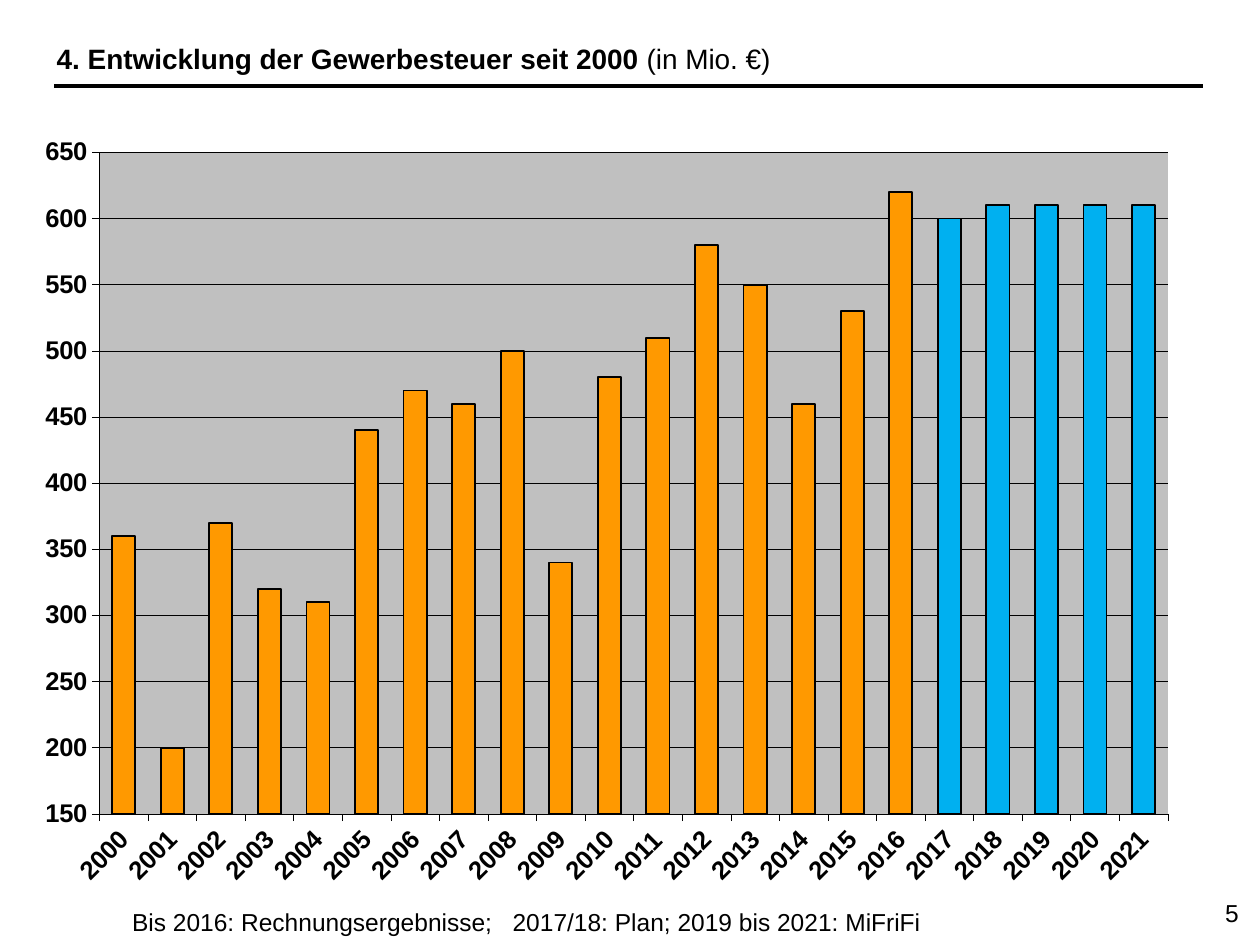
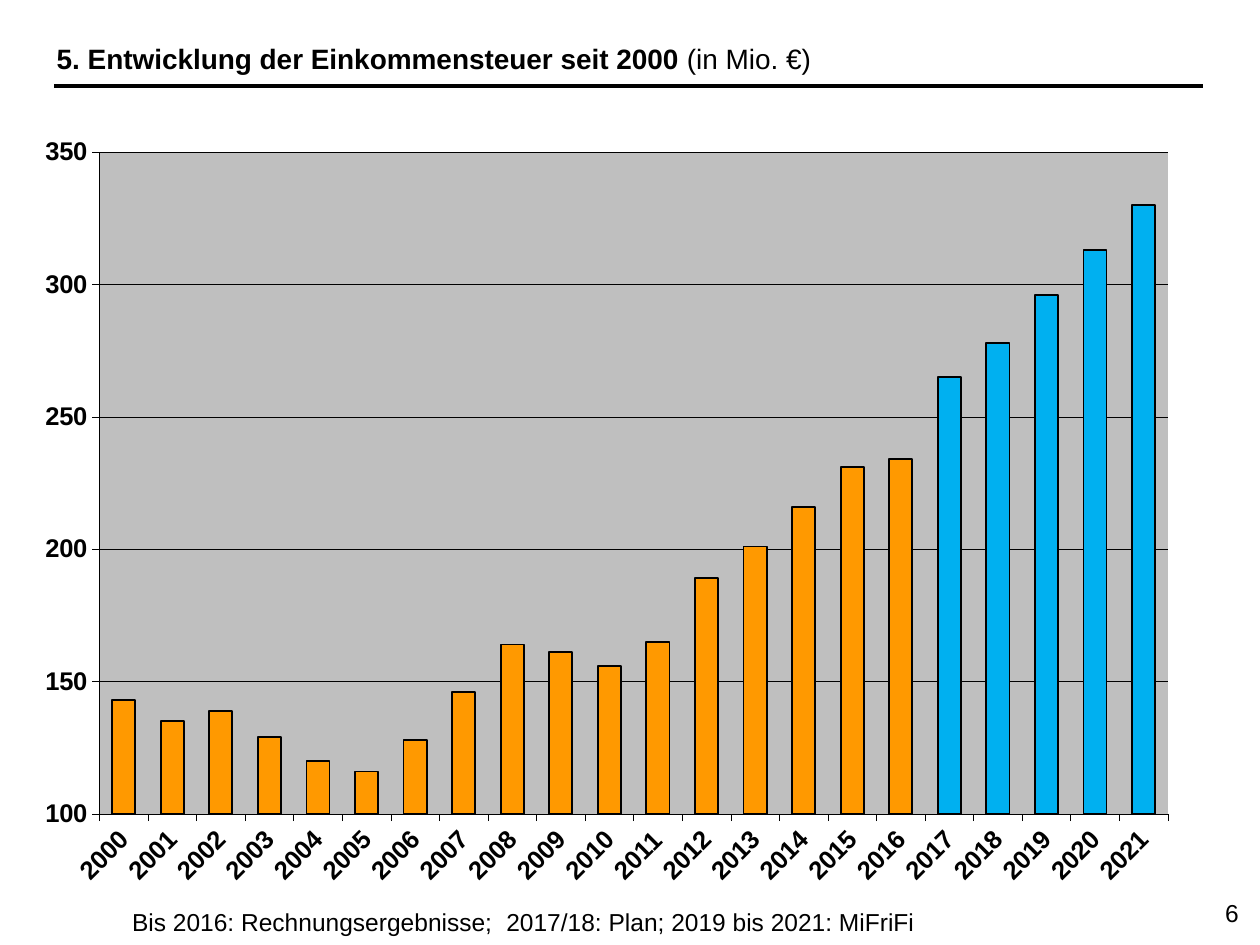
from lxml.etree import SubElement
from pptx import Presentation
from pptx.chart.data import CategoryChartData
from pptx.dml.color import RGBColor
from pptx.enum.chart import XL_CHART_TYPE, XL_TICK_MARK
from pptx.enum.shapes import MSO_CONNECTOR
from pptx.enum.text import MSO_ANCHOR, MSO_AUTO_SIZE, PP_ALIGN
from pptx.oxml import parse_xml
from pptx.oxml.ns import nsdecls, qn
from pptx.util import Inches, Pt

COLORS = {"ink": "000000", "actual": "FF9900", "plan": "00B0F0"}
FONT = "Arial"
YEARS = range(2000, 2022)
LAST_ACTUAL = 2016
UNIT = "(in Mio. €)"
NOTE = "Bis 2016: Rechnungsergebnisse;\t2017/18: Plan; 2019 bis 2021: MiFriFi"
WIDTH, HEIGHT = 9.26, 6.03
PLOT = {"x": 0.68 / WIDTH, "y": 0.12 / HEIGHT,
        "w": 8.48 / WIDTH, "h": 5.25 / HEIGHT}

SLIDES = [
    {"title": "4. Entwicklung der Gewerbesteuer seit 2000 ", "page": "5",
     "low": 150, "high": 650, "back": "C0C0C0", "tab": 3.02,
     "values": [360, 200, 370, 320, 310, 440, 470, 460, 500, 340, 480,
                510, 580, 550, 460, 530, 620, 600, 610, 610, 610, 610]},
    {"title": "5. Entwicklung der Einkommensteuer seit 2000 ", "page": "6",
     "low": 100, "high": 350, "back": "BFBFBF", "tab": 2.97,
     "values": [143, 135, 139, 129, 120, 116, 128, 146, 164, 161, 156,
                165, 189, 201, 216, 231, 234, 265, 278, 296, 313, 330]},
]


def color(name):
    return RGBColor.from_string(COLORS[name])


def set_font(font, size, bold=False):
    font.name = FONT
    font.size = Pt(size)
    font.bold = bold
    font.color.rgb = color("ink")


def set_line(line, width):
    line.color.rgb = color("ink")
    line.width = Pt(width)


def add_title(slide, text):
    title = slide.shapes.title
    title.left, title.top = Inches(0.35), Inches(0.28)
    title.width, title.height = Inches(9.2), Inches(0.38)
    frame = title.text_frame
    frame.auto_size = MSO_AUTO_SIZE.NONE
    frame.vertical_anchor = MSO_ANCHOR.TOP
    para = frame.paragraphs[0]
    para.alignment = PP_ALIGN.LEFT
    for part, bold in ((text, True), (UNIT, False)):
        run = para.add_run()
        run.text = part
        set_font(run.font, 16, bold)


def add_rule(slide):
    y = Inches(0.68)
    rule = slide.shapes.add_connector(
        MSO_CONNECTOR.STRAIGHT, Inches(0.43), y, Inches(9.55), y)
    set_line(rule.line, 2.25)
    SubElement(rule._element.spPr, qn("a:effectLst"))


def add_text(slide, text, left, top, width, align=PP_ALIGN.LEFT):
    box = slide.shapes.add_textbox(
        Inches(left), Inches(top), Inches(width), Inches(0.34))
    frame = box.text_frame
    frame.word_wrap = True
    frame.text = text
    para = frame.paragraphs[0]
    para.alignment = align
    for run in para.runs:
        set_font(run.font, 14)
    return para


def add_note(slide, tab):
    para = add_text(slide, NOTE, 0.95, 7.15, 6.6)
    stops = SubElement(para._p.get_or_add_pPr(), qn("a:tabLst"))
    SubElement(stops, qn("a:tab"), pos=str(Inches(tab)), algn="l")


def style_axis(axis):
    axis.major_tick_mark = XL_TICK_MARK.OUTSIDE
    axis.minor_tick_mark = XL_TICK_MARK.NONE
    set_font(axis.tick_labels.font, 14.6, True)
    set_line(axis.format.line, 0.25)


def style_plot(chart, back):
    area = chart._chartSpace.find(".//" + qn("c:plotArea"))
    for old in area.findall(qn("c:layout")):
        area.remove(old)
    modes = '<c:xMode val="edge"/><c:yMode val="edge"/>'
    sizes = "".join(f'<c:{key} val="{val:.4f}"/>' for key, val in PLOT.items())
    area.insert(0, parse_xml(
        f'<c:layout {nsdecls("c")}><c:manualLayout>'
        f'<c:layoutTarget val="inner"/>{modes}{sizes}'
        '</c:manualLayout></c:layout>'))
    area.append(parse_xml(
        f'<c:spPr {nsdecls("c", "a")}><a:solidFill>'
        f'<a:srgbClr val="{back}"/></a:solidFill>'
        '<a:ln><a:noFill/></a:ln></c:spPr>'))


def style_bars(plot):
    plot.gap_width = 110
    plot.vary_by_categories = False
    bars = plot.series[0]
    bars.invert_if_negative = False
    bars.format.fill.solid()
    bars.format.fill.fore_color.rgb = color("actual")
    set_line(bars.format.line, 1.04)
    for index, year in enumerate(YEARS):
        if year > LAST_ACTUAL:
            point = bars.points[index].format
            point.fill.solid()
            point.fill.fore_color.rgb = color("plan")
            set_line(point.line, 1.04)


def add_bars(slide, data):
    table = CategoryChartData()
    table.categories = [str(year) for year in YEARS]
    table.add_series("Series 1", data["values"])
    chart = slide.shapes.add_chart(
        XL_CHART_TYPE.COLUMN_CLUSTERED, Inches(0.11), Inches(1.09),
        Inches(WIDTH), Inches(HEIGHT), table).chart
    chart.has_legend = False
    chart.has_title = False
    set_font(chart.font, 14.6, True)
    years, scale = chart.category_axis, chart.value_axis
    style_axis(years)
    style_axis(scale)
    years._element.find(qn("c:txPr")).find(qn("a:bodyPr")).set("rot", "-2700000")
    scale.minimum_scale = data["low"]
    scale.maximum_scale = data["high"]
    scale.major_unit = 50
    scale.has_major_gridlines = True
    set_line(scale.major_gridlines.format.line, 0.25)
    style_bars(chart.plots[0])
    style_plot(chart, data["back"])


def main():
    deck = Presentation()
    deck.slide_width, deck.slide_height = Inches(10), Inches(7.5)
    for data in SLIDES:
        slide = deck.slides.add_slide(deck.slide_layouts[5])
        add_rule(slide)
        add_title(slide, data["title"])
        add_text(slide, data["page"], 7.6, 7.08, 2.33, PP_ALIGN.RIGHT)
        add_bars(slide, data)
        add_note(slide, data["tab"])
    deck.save("out.pptx")


if __name__ == "__main__":
    main()
